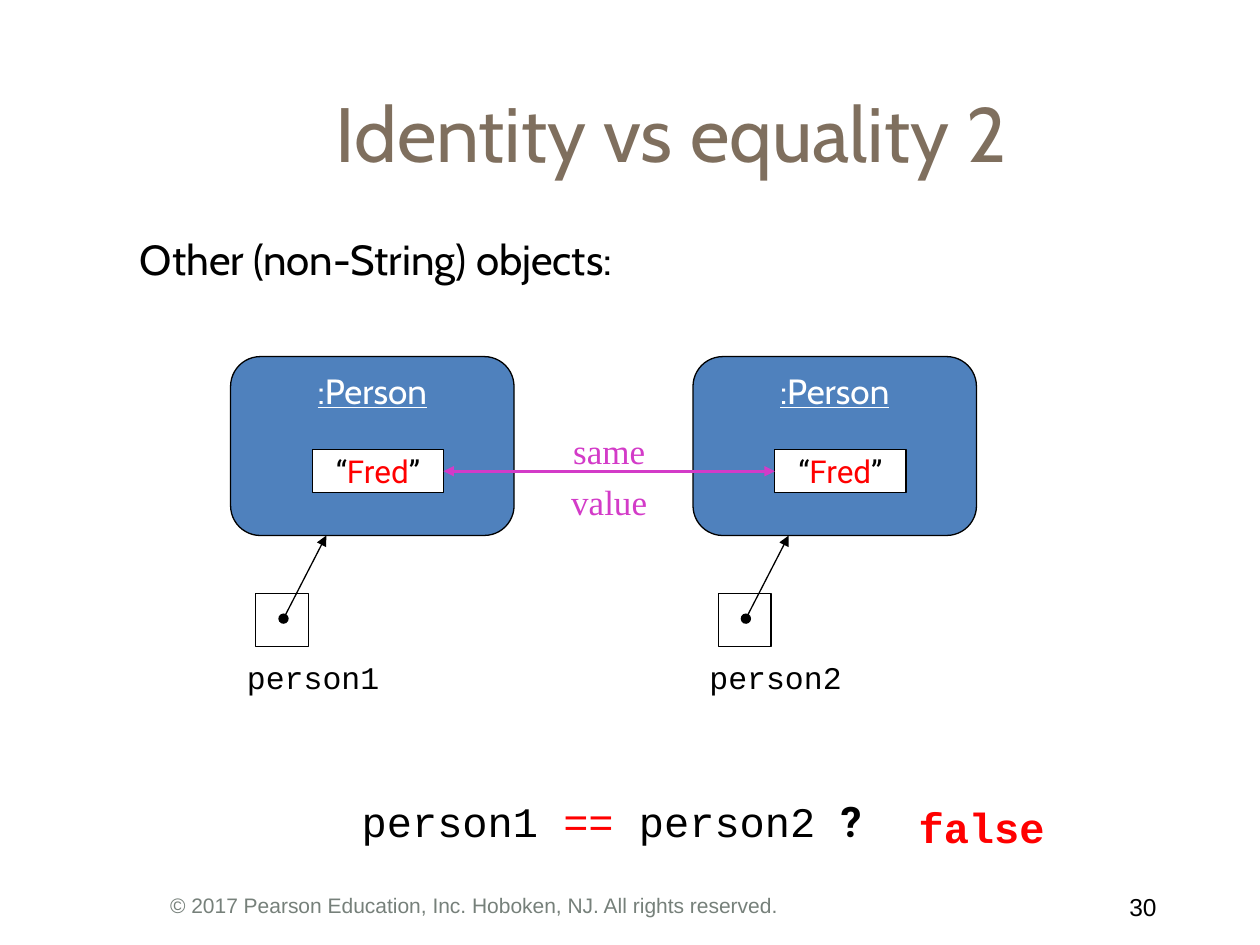
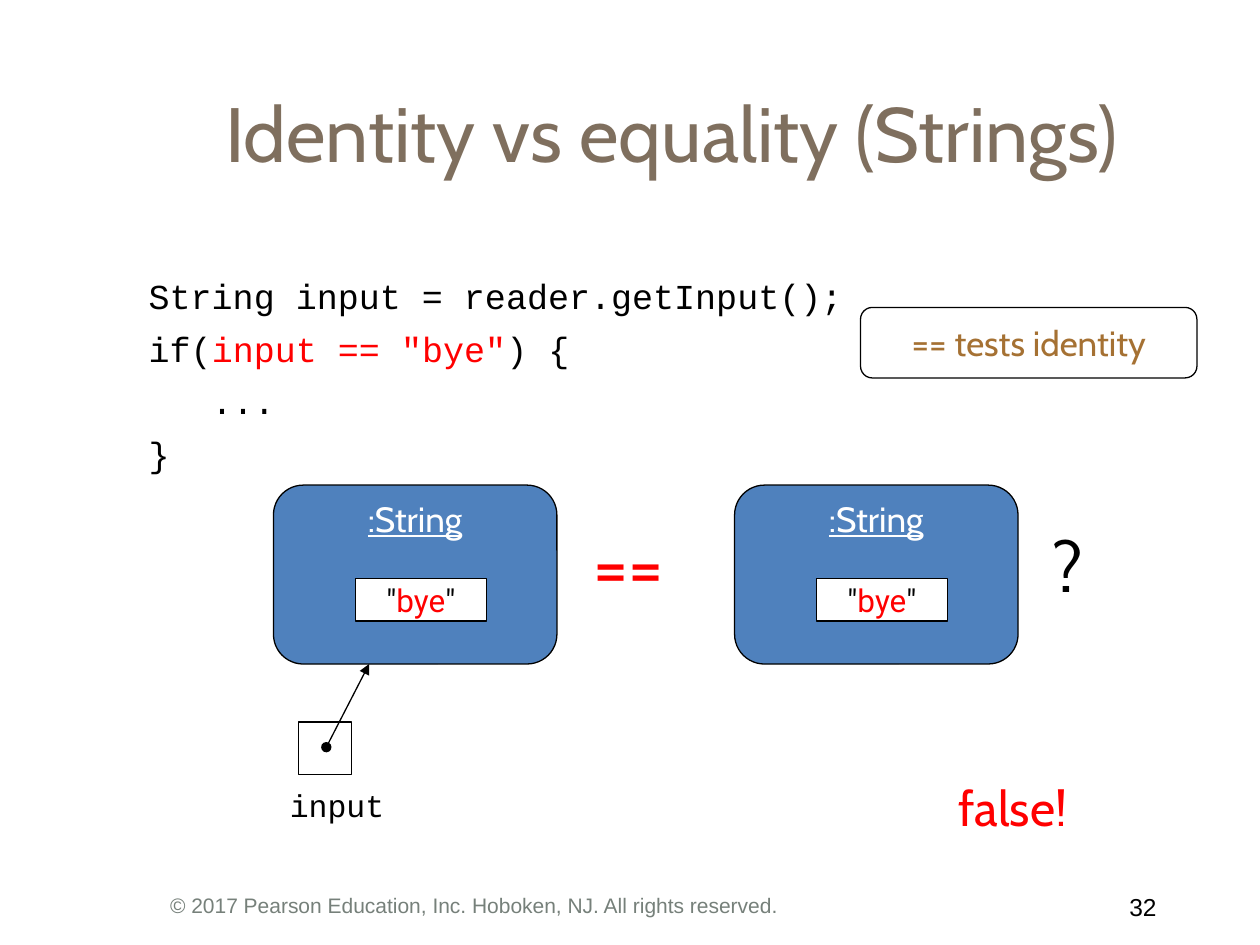
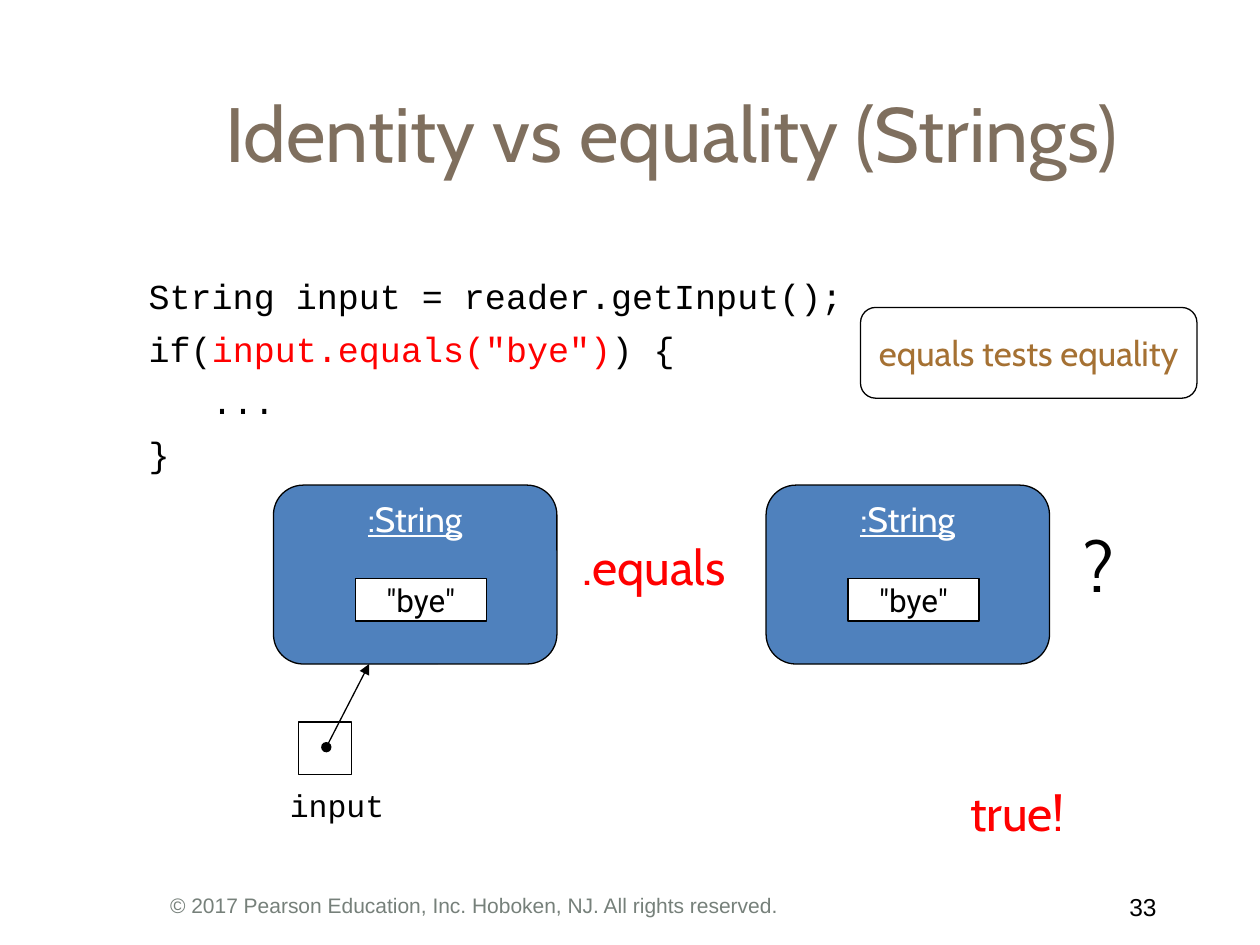
import pptx
import pptx.dml.color
import pptx.enum.shapes
import pptx.enum.text
import pptx.oxml
import pptx.oxml.ns
import pptx.util

Inches = pptx.util.Inches
SHAPE = pptx.enum.shapes.MSO_SHAPE
LEFT, CENTER, RIGHT = (pptx.enum.text.PP_ALIGN.LEFT, pptx.enum.text.PP_ALIGN.CENTER,
                       pptx.enum.text.PP_ALIGN.RIGHT)
TOP, MIDDLE = pptx.enum.text.MSO_ANCHOR.TOP, pptx.enum.text.MSO_ANCHOR.MIDDLE
COLORS = {"black": "000000", "white": "FFFFFF", "red": "FF0000", "title": "7F6F5E",
          "footer": "76807A", "object": "4F81BD", "pink": "D33BC8", "callout": "A57133"}
BODY, CODE, VALUE = "Cabin", "Courier New", "Roboto"
FOOTER = "© 2017 Pearson Education, Inc. Hoboken, NJ. All rights reserved."
OBJECT_WIDTH, OBJECT_HEIGHT = 2.25, 1.42


def write(box, paragraphs, size, font=BODY, align=LEFT, anchor=TOP, gap=0, top=0):
    """Fill a box; a paragraph is a list of (text, colour) or (text, colour, font changes)."""
    frame = box.text_frame
    frame.word_wrap = True
    frame.vertical_anchor = anchor
    frame.margin_left = frame.margin_right = Inches(0.04)
    frame.margin_top, frame.margin_bottom = Inches(top), 0
    for number, runs in enumerate(paragraphs):
        para = frame.add_paragraph() if number else frame.paragraphs[0]
        para.alignment = align
        if number:
            para.space_before = pptx.util.Pt(gap)
        for text, color, *changes in runs:
            span = para.add_run()
            span.text = text
            span.font.name = font
            span.font.size = pptx.util.Pt(size)
            span.font.color.rgb = pptx.dml.color.RGBColor.from_string(COLORS[color])
            for change in changes:
                for key, value in change.items():
                    setattr(span.font, key, value)


def outline(page, kind, at, fill=None):
    """Add a shape with a thin black line, filled only if a colour is named."""
    shape = page.shapes.add_shape(kind, *map(Inches, at))
    shape.shadow.inherit = False
    if fill:
        shape.fill.solid()
        shape.fill.fore_color.rgb = pptx.dml.color.RGBColor.from_string(COLORS[fill])
    else:
        shape.fill.background()
    shape.line.color.rgb = pptx.dml.color.RGBColor.from_string(COLORS["black"])
    shape.line.width = pptx.util.Pt(0.75)
    return shape


def_fred = [("“", "black"), ("Fred", "red"), ("”", "black")]
red_bye = [('"', "black"), ("bye", "red"), ('"', "black")]
black_bye = [('"bye"', "black")]

# Each object is (left, variable name or None); each note is (at, paragraphs, size, font).
slides = [
    {"number": 30, "title": "Identity vs equality 2", "class": ":Person", "value": def_fred,
     "top": 2.83, "objects": [(1.83, "person1"), (5.5, "person2")],
     "notes": [
         ((1.07, 1.85, 7.43, 0.5), [[("Other (non-String) objects:", "black")]], 24, BODY),
         ((2.83, 6.31, 4.11, 0.4),
          [[("person1 ", "black"), ("==", "red"), (" person2 ", "black"),
            ("?", "black", {"name": VALUE, "bold": True})]], 24, CODE),
         ((7.25, 6.36, 1.25, 0.4), [[("false", "red", {"bold": True})]], 24, CODE)]},
    {"number": 32, "title": "Identity vs equality (Strings)", "class": ":String",
     "value": red_bye, "top": 3.85, "objects": [(2.17, "input"), (5.83, None)],
     "test": 'input == "bye"', "callout": ("== tests identity", 0.56),
     "notes": [
         ((4.67, 4.15, 0.75, 0.67), [[("==", "red")]], 40, BODY),
         ((8.31, 4.15, 0.33, 0.67), [[("?", "black")]], 40, BODY),
         ((7.57, 6.17, 1.07, 0.47), [[("false!", "red")]], 28, BODY)]},
    {"number": 33, "title": "Identity vs equality (Strings)", "class": ":String",
     "value": black_bye, "top": 3.85, "objects": [(2.17, "input"), (6.08, None)],
     "test": 'input.equals("bye")', "callout": ("equals tests equality", 0.72),
     "notes": [
         ((4.58, 4.26, 1.41, 0.47), [[(".equals", "red")]], 28, BODY),
         ((8.56, 4.15, 0.33, 0.67), [[("?", "black")]], 40, BODY),
         ((7.66, 6.21, 0.97, 0.47), [[("true!", "red")]], 28, BODY)]},
]

deck = pptx.Presentation()
deck.slide_width, deck.slide_height = Inches(10), Inches(7.5)

for content in slides:
    page = deck.slides.add_slide(deck.slide_layouts[6])
    title = page.shapes.add_textbox(*map(Inches, (1.08, 0.42, 8.5, 1.25)))
    write(title, [[(content["title"], "title")]], 44, align=CENTER, anchor=MIDDLE)
    footer = page.shapes.add_textbox(*map(Inches, (1.31, 7.08, 7.4, 0.28)))
    write(footer, [[(FOOTER, "footer")]], 12, "Arial")
    page_number = page.shapes.add_textbox(*map(Inches, (8.75, 7.08, 0.47, 0.28)))
    write(page_number, [[(str(content["number"]), "black")]], 14, "Arial", RIGHT)

    # Objects, with the variables that refer to them
    top = content["top"]
    value_boxes = []
    arrows = []
    for left, variable in content["objects"]:
        card = outline(page, SHAPE.ROUNDED_RECTANGLE,
                       (left, top, OBJECT_WIDTH, OBJECT_HEIGHT), "object")
        write(card, [[(content["class"], "white", {"underline": True})]], 20,
              align=CENTER, top=0.03)
        value_box = outline(page, SHAPE.RECTANGLE, (left + 0.65, top + 0.74, 1.04, 0.34), "white")
        write(value_box, [content["value"]], 18, VALUE, CENTER, MIDDLE)
        value_boxes.append(value_box)
        if variable:
            pointer = page.shapes.add_connector(
                pptx.enum.shapes.MSO_CONNECTOR.STRAIGHT, Inches(left + 0.42), Inches(top + 2.08),
                Inches(left + 0.76), Inches(top + OBJECT_HEIGHT))
            arrows.append((pointer, "black", 0.75, "oval"))
            outline(page, SHAPE.RECTANGLE, (left + 0.2, top + 1.88, 0.42, 0.42))
            name = page.shapes.add_textbox(
                *map(Inches, (left + 0.09, top + 2.39, 1.14, 0.3)))
            write(name, [[(variable, "black")]], 18, CODE)

    if "test" in content:
        code = page.shapes.add_textbox(*map(Inches, (1.14, 2.18, 5.64, 1.56)))
        write(code, [[("String input = reader.getInput();", "black")],
                     [("if(", "black"), (content["test"], "red"), (") {", "black")],
                     [("   ...", "black")],
                     [("}", "black")]], 20, CODE, gap=6)
        label, height = content["callout"]
        callout = outline(page, SHAPE.ROUNDED_RECTANGLE, (6.83, 2.44, 2.67, height))
        write(callout, [[(label, "callout")]], 20, align=CENTER, anchor=MIDDLE)
    else:
        same_value = page.shapes.add_connector(
            pptx.enum.shapes.MSO_CONNECTOR.STRAIGHT, 0, 0, 0, 0)
        same_value.begin_connect(value_boxes[0], 3)
        same_value.end_connect(value_boxes[1], 1)
        arrows.append((same_value, "pink", 1.5, "triangle"))
        caption = page.shapes.add_textbox(*map(Inches, (4.25, 3.41, 1.17, 0.75)))
        write(caption, [[("same", "pink")], [("value", "pink")]], 20, "Times New Roman",
              CENTER, gap=5)

    for at, paragraphs, size, font in content["notes"]:
        write(page.shapes.add_textbox(*map(Inches, at)), paragraphs, size, font)

    for arrow, color, width, head in arrows:
        arrow.line.color.rgb = pptx.dml.color.RGBColor.from_string(COLORS[color])
        arrow.line.width = pptx.util.Pt(width)
        stroke = arrow.line._get_or_add_ln()
        for tag, end in (("a:headEnd", head), ("a:tailEnd", "triangle")):
            stroke.append(pptx.oxml.parse_xml(
                f'<{tag} {pptx.oxml.ns.nsdecls("a")} type="{end}"/>'))
        arrow._element.spPr.append(pptx.oxml.parse_xml(
            f'<a:effectLst {pptx.oxml.ns.nsdecls("a")}/>'))

deck.save("out.pptx")
